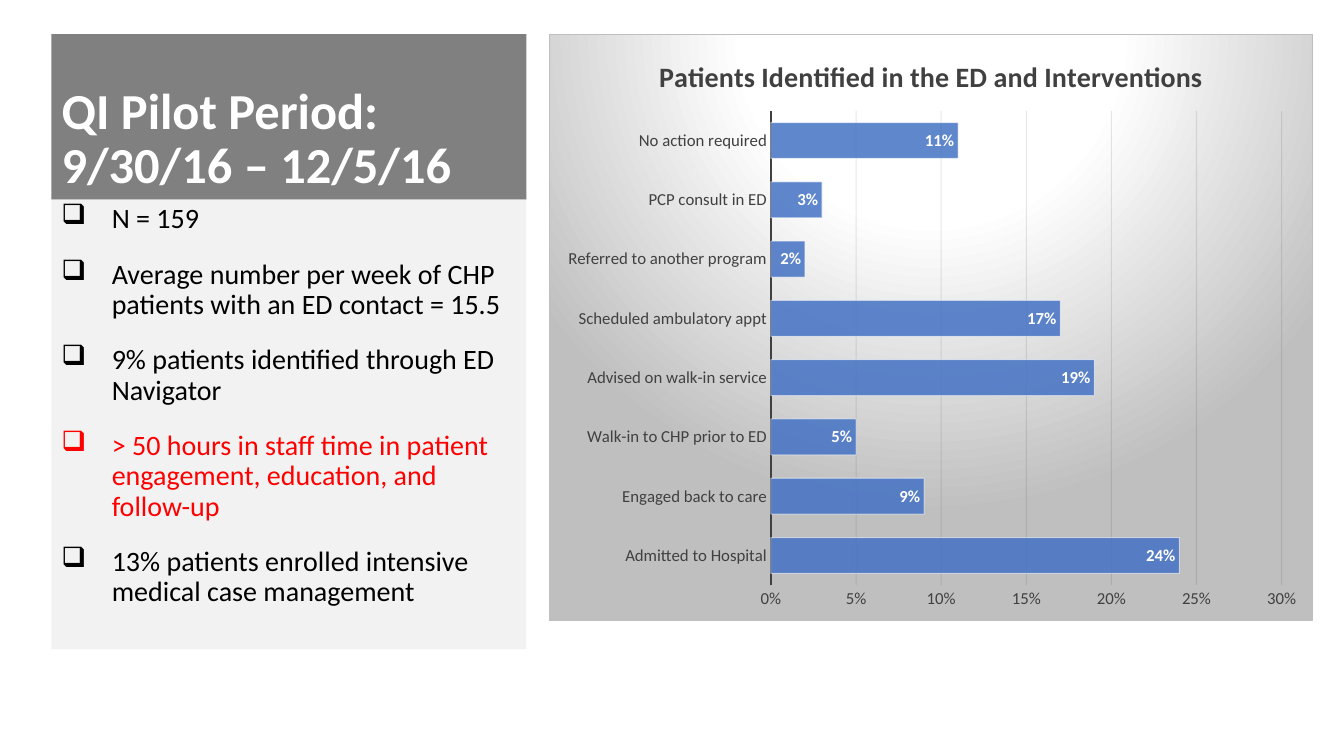
import pptx
import pptx.util
import pptx.oxml
import pptx.oxml.ns
import pptx.chart.data
import pptx.dml.color
import pptx.enum.chart
import pptx.enum.text

Pt = pptx.util.Pt
WIDE, HIGH = pptx.util.Inches(13.33), pptx.util.Inches(7.5)
FONT = "Calibri"

# Percent shares of the slide
LEFT, SIDE = 3.83, 35.33
TOP, HEAD, LIST = 4.53, 21.87, 59.47
PLOT = (40.88, TOP, 56.79, 77.6)

POINTS = [
    ("N = 159", "000000"),
    ("Average number per week of CHP patients with an ED contact = 15.5", "000000"),
    ("9% patients identified through ED Navigator", "000000"),
    ("> 50 hours in staff time in patient engagement, education, and follow-up", "FF0000"),
    ("13% patients enrolled intensive medical case management", "000000"),
]
RATES = {
    "Admitted to Hospital": 0.24,
    "Engaged back to care": 0.09,
    "Walk-in to CHP prior to ED": 0.05,
    "Advised on walk-in service": 0.19,
    "Scheduled ambulatory appt": 0.17,
    "Referred to another program": 0.02,
    "PCP consult in ED": 0.03,
    "No action required": 0.11,
}


def color(code):
    return pptx.dml.color.RGBColor.from_string(code)


def area(x, y, w, h):
    return [round(n * full / 100) for n, full in ((x, WIDE), (y, HIGH), (w, WIDE), (h, HIGH))]


def paint(item, code):
    item.fill.solid()
    item.fill.fore_color.rgb = color(code)


def style(font, size, code, bold=False):
    font.name, font.size, font.bold = FONT, Pt(size), bold
    font.color.rgb = color(code)


def stroke(line, code, width):
    line.color.rgb = color(code)
    line.width = Pt(width)


def parts(text):
    """Build an element whose prefixes are a (drawing) and c (chart)."""
    tag, rest = text.split(">", 1)
    return pptx.oxml.parse_xml(f"{tag} {pptx.oxml.ns.nsdecls('a', 'c')}>{rest}")


def fade(chart, where, share):
    for tint in chart.element.xpath(f"{where}//a:srgbClr"):
        tint.append(parts(f'<a:alpha val="{share * 1000}"></a:alpha>'))


def add_title(slide):
    title = slide.shapes.title
    title.left, title.top, title.width, title.height = area(LEFT, TOP, SIDE, HEAD)
    paint(title, "808080")
    frame = title.text_frame
    frame.vertical_anchor = pptx.enum.text.MSO_ANCHOR.BOTTOM
    frame.text = "QI Pilot Period:\v9/30/16 – 12/5/16"
    line = frame.paragraphs[0]
    line.alignment = pptx.enum.text.PP_ALIGN.LEFT
    line.line_spacing = 0.9
    style(line.font, 36, "FFFFFF", True)


def add_list(slide):
    box = slide.shapes.add_textbox(*area(LEFT, TOP + HEAD, SIDE, LIST))
    paint(box, "F2F2F2")
    frame = box.text_frame
    frame.word_wrap = True
    for rank, (text, code) in enumerate(POINTS):
        line = frame.add_paragraph() if rank else frame.paragraphs[0]
        line.text = text
        line.line_spacing = 0.9
        line.space_before = Pt(18 if rank else 0)
        props = line._p.get_or_add_pPr()
        props.set("marL", "457200")
        props.set("indent", "-457200")
        props.append(parts('<a:buChar char="❑"></a:buChar>'))
        style(line.font, 20, code)


def add_back(chart):
    stops = "".join(
        f'<a:gs pos="{spot * 1000}"><a:srgbClr val="{code}"/></a:gs>'
        for spot, code in ((0, "FFFFFF"), (39, "FFFFFF"), (100, "BFBFBF")))
    back = parts(
        f'<c:spPr><a:gradFill><a:gsLst>{stops}</a:gsLst><a:path path="circle">'
        '<a:fillToRect l="50000" t="-80000" r="50000" b="180000"/></a:path></a:gradFill>'
        '<a:ln w="9525"><a:solidFill><a:srgbClr val="BFBFBF"/></a:solidFill></a:ln></c:spPr>')
    chart.element.xpath("c:chart")[0].addnext(back)


def set_plot(chart, x, y, w, h):
    """Place the inner plot by shares of the chart."""
    plot = chart.element.xpath(".//c:plotArea")[0]
    for old in plot.xpath("c:layout"):
        plot.remove(old)
    sizes = "".join(f'<c:{key} val="{num}"/>' for key, num in zip("xywh", (x, y, w, h)))
    plot.insert(0, parts(
        '<c:layout><c:manualLayout><c:layoutTarget val="inner"/><c:xMode val="edge"/>'
        f'<c:yMode val="edge"/>{sizes}</c:manualLayout></c:layout>'))


def add_chart(slide):
    kinds = pptx.enum.chart
    data = pptx.chart.data.CategoryChartData(number_format="0%")
    data.categories = list(RATES)
    data.add_series("Series 1", list(RATES.values()))
    chart = slide.shapes.add_chart(kinds.XL_CHART_TYPE.BAR_CLUSTERED, *area(*PLOT), data).chart
    style(chart.font, 10, "000000")
    chart.has_legend = False
    chart.has_title = True
    head = chart.chart_title.text_frame
    head.text = "Patients Identified in the ED and Interventions"
    style(head.paragraphs[0].font, 20, "404040", True)

    # Axes
    names, scale = chart.category_axis, chart.value_axis
    for axis in (names, scale):
        axis.major_tick_mark = axis.minor_tick_mark = kinds.XL_TICK_MARK.NONE
        style(axis.tick_labels.font, 12, "404040")
    names.has_major_gridlines = False
    stroke(names.format.line, "404040", 1.5)
    scale.minimum_scale, scale.maximum_scale, scale.major_unit = 0, 0.3, 0.05
    scale.tick_labels.number_format = "0%"
    scale.tick_labels.number_format_is_linked = False
    scale.format.line.fill.background()
    stroke(scale.major_gridlines.format.line, "0D0D0D", 0.75)
    fade(chart, ".//c:majorGridlines", 10)

    # Bars and their labels
    plot = chart.plots[0]
    plot.gap_width = 65
    plot.vary_by_categories = False
    bars = plot.series[0]
    paint(bars.format, "4472C4")
    stroke(bars.format.line, "FFFFFF", 0.75)
    fade(chart, ".//c:ser/c:spPr/a:solidFill", 85)
    fade(chart, ".//c:ser/c:spPr/a:ln", 50)
    labels = bars.data_labels
    labels.show_value = True
    labels.position = kinds.XL_LABEL_POSITION.INSIDE_END
    labels.number_format = "0%"
    labels.number_format_is_linked = False
    style(labels.font, 12, "FFFFFF", True)

    add_back(chart)
    set_plot(chart, 0.29, 0.13, 0.67, 0.81)


def main():
    deck = pptx.Presentation()
    deck.slide_width, deck.slide_height = WIDE, HIGH
    slide = deck.slides.add_slide(deck.slide_layouts[5])
    add_title(slide)
    add_list(slide)
    add_chart(slide)
    deck.save("out.pptx")


if __name__ == "__main__":
    main()
